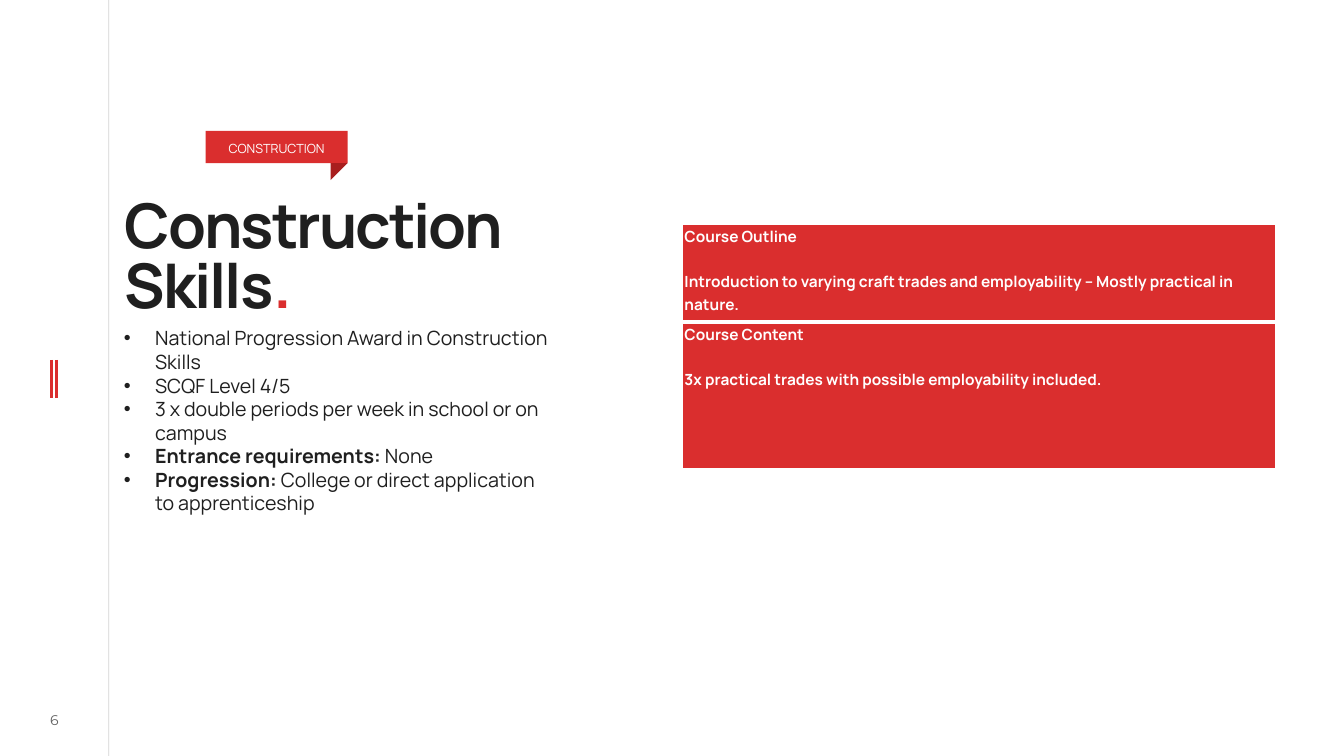
from dataclasses import dataclass

from lxml import etree
from pptx import Presentation
from pptx.dml.color import RGBColor
from pptx.enum.shapes import MSO_CONNECTOR, MSO_SHAPE
from pptx.enum.text import MSO_ANCHOR, MSO_AUTO_SIZE, PP_ALIGN
from pptx.oxml.ns import qn
from pptx.util import Cm, Pt

LINE = MSO_CONNECTOR.STRAIGHT
RECT, FOLD = MSO_SHAPE.RECTANGLE, MSO_SHAPE.RIGHT_TRIANGLE
TOP, MIDDLE = MSO_ANCHOR.TOP, MSO_ANCHOR.MIDDLE
LEFT, CENTER = PP_ALIGN.LEFT, PP_ALIGN.CENTER
FIXED, GROW = MSO_AUTO_SIZE.NONE, MSO_AUTO_SIZE.SHAPE_TO_FIT_TEXT


@dataclass(frozen=True)
class Theme:
    ink: str = "1F1F1F"
    red: str = "DA2E2E"
    dark: str = "A81E1E"
    white: str = "FFFFFF"
    font: str = "Manrope"
    digit: str = "Montserrat"
    title: float = 44
    body: float = 14
    cell: float = 11
    page: float = 10
    tag: float = 9


@dataclass(frozen=True)
class Rule:
    x: float
    top: float
    end: float
    color: str
    width: float
    alpha: int = 100


@dataclass(frozen=True)
class Point:
    text: str
    lead: str = ""


@dataclass(frozen=True)
class Row:
    head: str
    text: str
    height: float
    above: float
    below: float


THEME = Theme()
RULES = [
    Rule(2.74, 0, 19.05, THEME.ink, 0.5, 20),
    Rule(1.3, 9.07, 10.03, THEME.red, 2),
    Rule(1.42, 9.07, 10.03, THEME.red, 2),
]
POINTS = [
    Point("National Progression Award in Construction Skills"),
    Point("SCQF Level 4/5"),
    Point("3 x double periods per week in school or on campus"),
    Point("None", "Entrance requirements: "),
    Point("College or direct application to apprenticeship", "Progression: "),
]
ROWS = [
    Row("Course Outline",
        "Introduction to varying craft trades and employability – Mostly practical in nature.",
        2.46, 1, 3),
    Row("Course Content",
        "3x practical trades with possible employability included.",
        3.68, 3, 1),
]


def rgb(color: str) -> RGBColor:
    return RGBColor.from_string(color)


def fade(node, alpha: int) -> None:
    tint = next(node.iter(qn("a:srgbClr")))
    etree.SubElement(tint, qn("a:alpha"), val=str(alpha * 1000))


def style(run, size: float, color: str, bold: bool = False, font: str = THEME.font) -> None:
    run.font.size, run.font.bold, run.font.name = Pt(size), bold, font
    run.font.color.rgb = rgb(color)


def inset(frame, top: float = 0, bottom: float = 0) -> None:
    frame.margin_left = frame.margin_right = 0
    frame.margin_top, frame.margin_bottom = Cm(top), Cm(bottom)


def draw_rule(slide, rule: Rule) -> None:
    line = slide.shapes.add_connector(LINE, Cm(rule.x), Cm(rule.top), Cm(rule.x), Cm(rule.end))
    line.line.color.rgb = rgb(rule.color)
    line.line.width = Pt(rule.width)
    props = line.element.spPr
    if rule.alpha < 100:
        fade(props, rule.alpha)
    etree.SubElement(props, qn("a:effectLst"))


def draw_page(slide) -> None:
    frame = slide.shapes.add_textbox(Cm(0.66), Cm(17.83), Cm(1.42), Cm(0.64)).text_frame
    inset(frame)
    frame.word_wrap, frame.vertical_anchor = True, MIDDLE
    frame.text = "6"
    part = frame.paragraphs[0]
    part.alignment = CENTER
    style(part.runs[0], THEME.page, THEME.ink, font=THEME.digit)
    fade(part.runs[0].font._element, 70)


def draw_title(slide) -> None:
    title = slide.shapes.title
    title.left, title.top, title.width, title.height = Cm(3.15), Cm(4.55), Cm(13.79), Cm(4.5)
    frame = title.text_frame
    inset(frame, 0.53)
    frame.word_wrap, frame.auto_size, frame.vertical_anchor = True, FIXED, TOP
    frame.text = "Construction Skills"
    part = frame.paragraphs[0]
    part.alignment, part.line_spacing = LEFT, 0.8
    part.add_run().text = "."
    for run, color in zip(part.runs, (THEME.ink, THEME.red)):
        style(run, THEME.title, color, True)
        run.font._element.set("spc", "-150")


def add_form(slide, kind, box: tuple[float, ...], color: str):
    form = slide.shapes.add_shape(kind, *map(Cm, box))
    form.shadow.inherit = False
    form.fill.solid()
    form.fill.fore_color.rgb = rgb(color)
    form.line.fill.background()
    return form


def draw_tag(slide) -> None:
    frame = add_form(slide, RECT, (5.18, 3.3, 3.58, 0.81), THEME.red).text_frame
    inset(frame, 0.18, 0.13)
    frame.vertical_anchor = MIDDLE
    frame.text = "CONSTRUCTION"
    frame.paragraphs[0].alignment = CENTER
    style(frame.paragraphs[0].runs[0], THEME.tag, THEME.white)
    add_form(slide, FOLD, (8.33, 4.11, 0.43, 0.43), THEME.dark).rotation = 90


def draw_points(slide) -> None:
    frame = slide.shapes.add_textbox(Cm(2.87), Cm(8.1), Cm(11.35), Cm(5.05)).text_frame
    frame.word_wrap, frame.auto_size = True, GROW
    frame.text = "\n".join(point.lead or point.text for point in POINTS)
    for part, point in zip(frame.paragraphs, POINTS):
        if point.lead:
            part.add_run().text = point.text
        for run in part.runs:
            style(run, THEME.body, THEME.ink, run.text == point.lead)
        props = part._p.get_or_add_pPr()
        props.set("marL", str(Cm(0.79)))
        props.set("indent", str(-Cm(0.79)))
        etree.SubElement(props, qn("a:buFont"), typeface="Arial")
        etree.SubElement(props, qn("a:buChar"), char="•")


def edge(cell, row: Row) -> None:
    props = cell._tc.get_or_add_tcPr()
    sides = (("a:lnL", 1), ("a:lnR", 1), ("a:lnT", row.above), ("a:lnB", row.below))
    for spot, (side, width) in enumerate(sides):
        line = etree.Element(qn(side), w=str(Pt(width)))
        fill = etree.SubElement(line, qn("a:solidFill"))
        etree.SubElement(fill, qn("a:srgbClr"), val=THEME.white)
        props.insert(spot, line)


def draw_table(slide) -> None:
    tall = sum(row.height for row in ROWS)
    table = slide.shapes.add_table(len(ROWS), 1, Cm(17.2), Cm(5.66), Cm(14.94), Cm(tall)).table
    for spot, row in enumerate(ROWS):
        table.rows[spot].height = Cm(row.height)
        cell = table.cell(spot, 0)
        cell.fill.solid()
        cell.fill.fore_color.rgb = rgb(THEME.red)
        cell.margin_left = cell.margin_right = Cm(0.05)
        cell.margin_top = cell.margin_bottom = 0
        cell.text = f"{row.head}\n{row.text}"
        for part in cell.text_frame.paragraphs:
            part.line_spacing = 1.07
            style(part.runs[0], THEME.cell, THEME.white, True)
        cell.text_frame.paragraphs[1].space_before = Pt(16)
        edge(cell, row)


def main() -> None:
    deck = Presentation()
    deck.slide_width, deck.slide_height = Cm(33.87), Cm(19.05)
    slide = deck.slides.add_slide(deck.slide_layouts[5])
    for rule in RULES:
        draw_rule(slide, rule)
    draw_page(slide)
    draw_title(slide)
    draw_tag(slide)
    draw_points(slide)
    draw_table(slide)
    deck.save("out.pptx")


if __name__ == "__main__":
    main()
